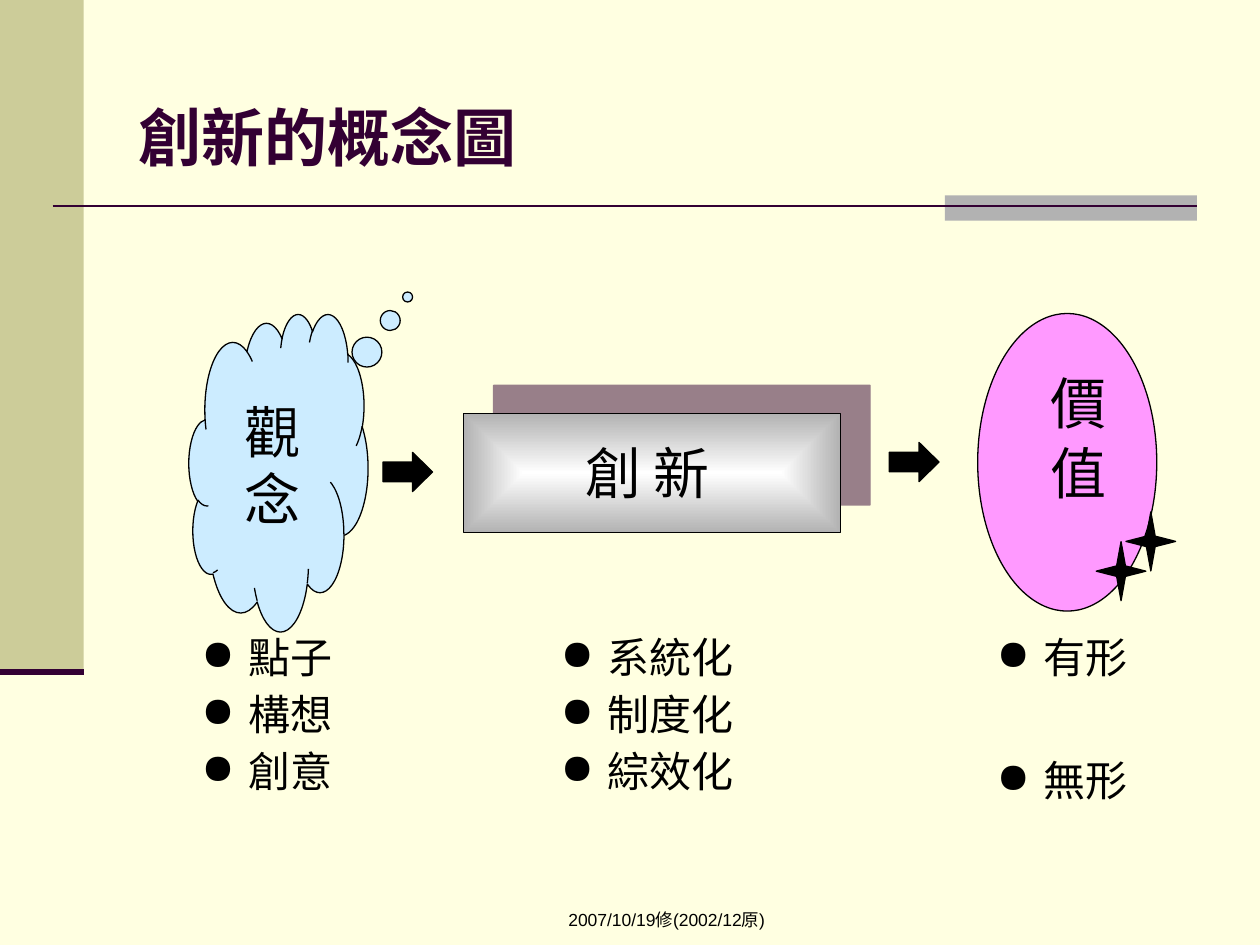
from dataclasses import dataclass

from lxml import etree
from pptx import Presentation
from pptx.dml.color import RGBColor
from pptx.enum.shapes import MSO_CONNECTOR, MSO_SHAPE
from pptx.enum.text import MSO_ANCHOR, MSO_AUTO_SIZE, PP_ALIGN
from pptx.oxml import parse_xml
from pptx.oxml.ns import nsdecls, qn
from pptx.util import Cm, Pt

RECT, OVAL = MSO_SHAPE.RECTANGLE, MSO_SHAPE.OVAL
CLOUD, STAR, ARROW = MSO_SHAPE.CLOUD_CALLOUT, MSO_SHAPE.STAR_4_POINT, MSO_SHAPE.RIGHT_ARROW
LEFT, CENTER = PP_ALIGN.LEFT, PP_ALIGN.CENTER
TOP, MIDDLE = MSO_ANCHOR.TOP, MSO_ANCHOR.MIDDLE


@dataclass(frozen=True)
class Theme:
    paper: str = "FFFFE1"
    olive: str = "CCCC99"
    gray: str = "B2B2B2"
    plum: str = "330033"
    sky: str = "CCECFF"
    pink: str = "FF99FF"
    white: str = "FFFFFF"
    black: str = "000000"
    title_size: int = 36
    label_size: int = 32
    list_size: int = 24
    footer_size: int = 10
    body_font: str = "Lato"
    title_font: str = "Noto Sans CJK SC"
    footer_font: str = "Arial"


THEME = Theme()

# All positions are left, top, width, height in centimetres.
TITLE = ("創新的概念圖", (2.54, 0.84, 21.59, 3.81))
FOOTER = ("2007/10/19修(2002/12原)", (9.31, 18.2, 8.26, 0.43))
IDEA = (["觀", "念"], (3.81, 6.32, 3.61, 6.4))
INNOVATION_BOX = (9.35, 8.33, 7.59, 2.41)
INNOVATION = ("創 新", (10.16, 8.71, 5.79, 1.6))
VALUE_OVAL = (19.71, 6.32, 3.61, 6.0)
VALUE = ("價 值", (20.65, 7.32, 1.85, 3.81))
ARROWS = [(7.72, 9.12), (17.93, 8.92)]
STARS = [(22.1, 10.92), (22.7, 10.32)]
LIST_TOP, LIST_HEIGHT = 12.73, 4.01
LISTS = [  # left, width, extra points before the later items, items
    (3.81, 5.41, 0, ["點子", "構想", "創意"]),
    (11.05, 5.41, 0, ["系統化", "制度化", "綜效化"]),
    (19.84, 3.3, 37.7, ["有形", "無形"]),
]
RULES = [  # x1, y1, x2, y2, points
    (1.06, 4.15, 24.13, 4.15, 1.5),
    (0, 13.55, 1.69, 13.55, 3.5),
]


def color(code):
    return RGBColor.from_string(code)


def add_shape(page, kind, place, fill, line=THEME.black, adjust=()):
    shape = page.shapes.add_shape(kind, *map(Cm, place))
    shape.shadow.inherit = False
    shape.fill.solid()
    shape.fill.fore_color.rgb = color(fill)
    if line:
        shape.line.color.rgb = color(line)
        shape.line.width = Pt(0.75)
    else:
        shape.line.fill.background()
    for index, value in enumerate(adjust):
        shape.adjustments[index] = value
    return shape


def add_rule(page, x1, y1, x2, y2, width):
    rule = page.shapes.add_connector(MSO_CONNECTOR.STRAIGHT, *map(Cm, (x1, y1, x2, y2)))
    rule.line.color.rgb = color(THEME.plum)
    rule.line.width = Pt(width)
    etree.SubElement(rule._element.spPr, qn("a:effectLst"))


def add_bullet(para):
    props = para._p.get_or_add_pPr()
    indent = Cm(0.95)
    props.set("marL", str(indent))
    props.set("indent", str(-indent))
    etree.SubElement(props, qn("a:buChar")).set("char", "●")


def write(box, lines, size, font=THEME.body_font, ink=THEME.black, bold=False,
          align=CENTER, anchor=TOP, before=0, extra=0, spacing=None, bullet=False):
    """Fill a box with paragraphs; extra widens the gap above all but the first."""
    frame = box.text_frame
    frame.word_wrap = True
    frame.vertical_anchor = anchor
    for index, line in enumerate(lines):
        para = frame.add_paragraph() if index else frame.paragraphs[0]
        para.alignment = align
        para.space_before = Pt(before + (extra if index else 0))
        if spacing:
            para.line_spacing = spacing
        if bullet:
            add_bullet(para)
        span = para.add_run()
        span.text = line
        span.font.name = font
        span.font.size = Pt(size)
        span.font.bold = bold
        span.font.color.rgb = color(ink)
        if font == THEME.title_font:
            east = etree.SubElement(span._r.get_or_add_rPr(), qn("a:ea"))
            east.set("typeface", font)


def add_text(page, place, lines, size, **style):
    box = page.shapes.add_textbox(*map(Cm, place))
    write(box, lines, size, **style)
    return box


def add_glow_and_shadow(shape):
    """Give a white-centred gradient and an offset half-transparent shadow."""
    props = shape._element.spPr
    gradient = parse_xml(
        f'<a:gradFill {nsdecls("a")} rotWithShape="1"><a:gsLst>'
        f'<a:gs pos="0"><a:srgbClr val="{THEME.white}"/></a:gs>'
        f'<a:gs pos="100000"><a:srgbClr val="{THEME.gray}"/></a:gs></a:gsLst>'
        '<a:path path="shape"><a:fillToRect l="50000" t="50000" r="50000" b="50000"/>'
        '</a:path></a:gradFill>')
    props.replace(props.find(qn("a:solidFill")), gradient)
    shadow = parse_xml(
        f'<a:outerShdw {nsdecls("a")} dist="{Pt(23.3)}" dir="{317 * 60000}" '
        f'algn="ctr" rotWithShape="0"><a:srgbClr val="{THEME.plum}">'
        '<a:alpha val="50000"/></a:srgbClr></a:outerShdw>')
    props.find(qn("a:effectLst")).append(shadow)


def add_frame(page):
    page.background.fill.solid()
    page.background.fill.fore_color.rgb = color(THEME.paper)
    add_shape(page, RECT, (0, 0, 1.69, 13.55), THEME.olive, line=None)
    add_shape(page, RECT, (19.05, 3.94, 5.08, 0.51), THEME.gray, line=None)
    for rule in RULES:
        add_rule(page, *rule)
    text, place = FOOTER
    add_text(page, place, [text], THEME.footer_size, font=THEME.footer_font)
    text, place = TITLE
    add_text(page, place, [text], THEME.title_size, font=THEME.title_font,
             ink=THEME.plum, bold=True, align=LEFT, anchor=MIDDLE)


def add_diagram(page):
    lines, place = IDEA
    cloud = add_shape(page, CLOUD, place, THEME.sky, adjust=(0.721, -0.552))
    write(cloud, lines, THEME.label_size, anchor=MIDDLE)

    add_glow_and_shadow(add_shape(page, RECT, INNOVATION_BOX, THEME.gray))
    text, place = INNOVATION
    add_text(page, place, [text], THEME.label_size)

    add_shape(page, OVAL, VALUE_OVAL, THEME.pink)
    for corner in STARS:
        add_shape(page, STAR, (*corner, 1.0, 1.19), THEME.black, adjust=(0.125,))
    text, place = VALUE
    label = add_text(page, place, [text], THEME.label_size)
    label.text_frame._txBody.bodyPr.set("vert", "eaVert")

    for corner in ARROWS:
        add_shape(page, ARROW, (*corner, 1.0, 0.79), THEME.black, adjust=(0.5, 0.51))
    for left, width, extra, items in LISTS:
        box = add_text(page, (left, LIST_TOP, width, LIST_HEIGHT), items, THEME.list_size,
                       align=LEFT, before=6.5, extra=extra, spacing=0.9, bullet=True)
        box.text_frame.auto_size = MSO_AUTO_SIZE.SHAPE_TO_FIT_TEXT


def main():
    deck = Presentation()
    deck.slide_width, deck.slide_height = Cm(25.4), Cm(19.05)
    page = deck.slides.add_slide(deck.slide_layouts[6])
    add_frame(page)
    add_diagram(page)
    deck.save("out.pptx")


if __name__ == "__main__":
    main()
